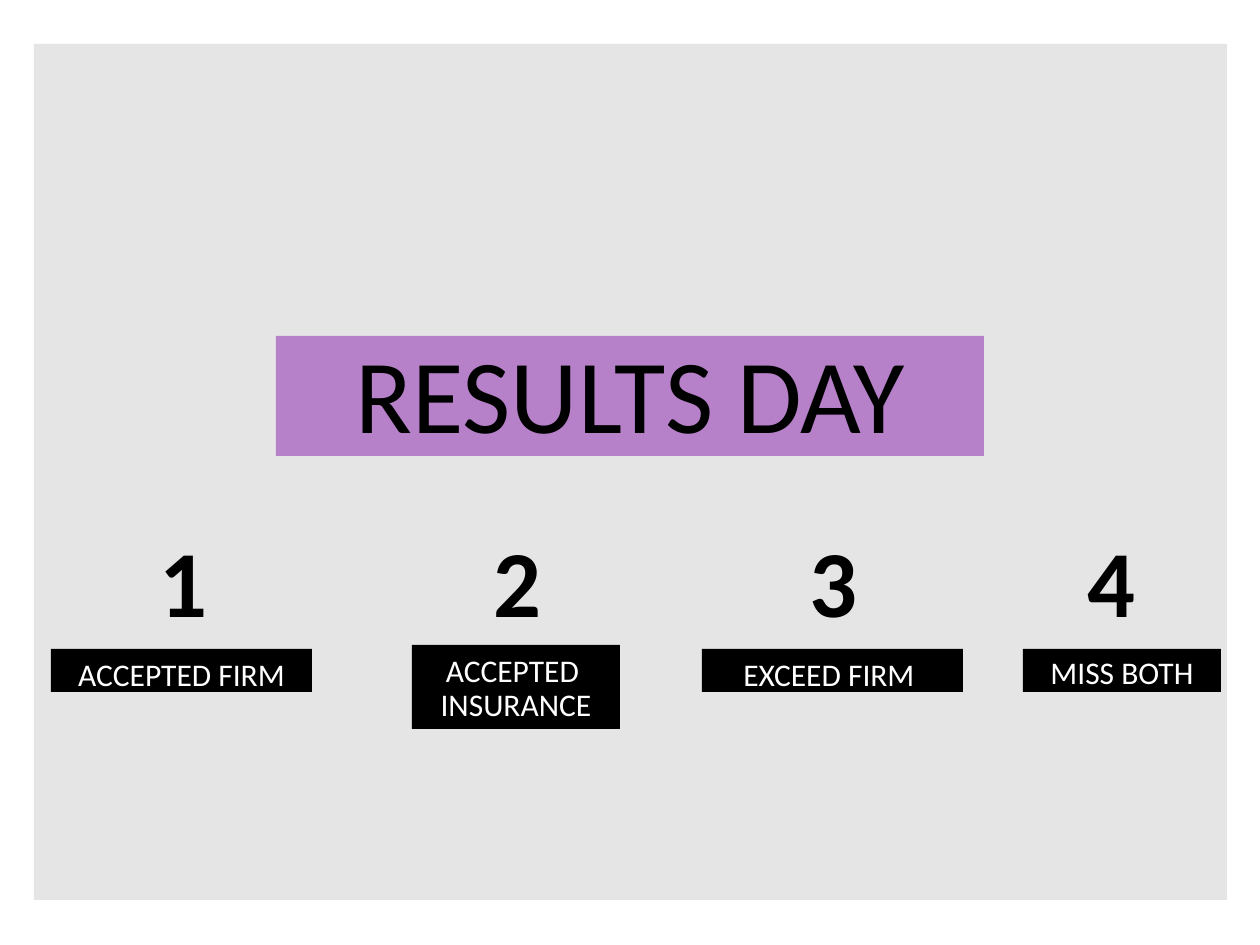
"""Build the results day slide with its four numbered outcomes."""
import dataclasses
from typing import Optional

import pptx
import pptx.dml.color
import pptx.enum.shapes
import pptx.enum.text
import pptx.util

EMU_PER_PX = 914400 / 126
COLOURS = {"panel": "E5E5E5", "title": "B781CA", "black": "000000", "white": "FFFFFF"}
TOP = pptx.enum.text.MSO_ANCHOR.TOP
BOTTOM = pptx.enum.text.MSO_ANCHOR.BOTTOM


@dataclasses.dataclass(frozen=True)
class Area:
    left: int
    top: int
    width: int
    height: int


@dataclasses.dataclass(frozen=True)
class TextStyle:
    size: int
    colour: str
    bold: bool = False
    anchor: pptx.enum.text.MSO_ANCHOR = TOP
    insets: tuple[int, int, int, int] = (0, 0, 0, 0)
    line_spacing: Optional[float] = 0.9
    space_after: float = 10.6


@dataclasses.dataclass(frozen=True)
class Outcome:
    number_left: int
    label: str
    area: Area
    label_inset: int = 10


TITLE = TextStyle(60, "black", anchor=BOTTOM)
NUMBER = TextStyle(54, "black", bold=True, insets=(9, 5, 9, 5), line_spacing=None, space_after=0)
LABEL = TextStyle(18, "white")

OUTCOMES = [
    Outcome(151, "ACCEPTED FIRM", Area(51, 649, 261, 43)),
    Outcome(485, "ACCEPTED \vINSURANCE", Area(412, 645, 208, 84)),
    Outcome(801, "EXCEED FIRM ", Area(702, 649, 261, 43)),
    Outcome(1079, "MISS BOTH", Area(1023, 649, 198, 43), label_inset=8),
]


def px(length: int) -> pptx.util.Emu:
    """Turn pixels into EMU."""
    return pptx.util.Emu(round(length * EMU_PER_PX))


def place(area: Area) -> list[pptx.util.Emu]:
    """Return the four lengths of an area in EMU."""
    return [px(length) for length in dataclasses.astuple(area)]


def colour(name: str) -> pptx.dml.color.RGBColor:
    """Look up a named colour."""
    return pptx.dml.color.RGBColor.from_string(COLOURS[name])


def apply(target: object, values: dict[str, object]) -> None:
    """Set each format value on the target."""
    for name, value in values.items():
        setattr(target, name, value)


def write(box, text: str, style: TextStyle) -> None:
    """Put one centred paragraph into a box."""
    sides = ("margin_left", "margin_top", "margin_right", "margin_bottom")
    frame = box.text_frame
    apply(frame, {"word_wrap": True, "vertical_anchor": style.anchor})
    apply(frame, dict(zip(sides, map(px, style.insets))))
    para = frame.paragraphs[0]
    para.text = text
    apply(para, {
        "alignment": pptx.enum.text.PP_ALIGN.CENTER,
        "line_spacing": style.line_spacing,
        "space_after": pptx.util.Pt(style.space_after),
    })
    for span in para.runs:
        apply(span.font, {"name": "Calibri", "size": pptx.util.Pt(style.size), "bold": style.bold})
        span.font.color.rgb = colour(style.colour)


def add_block(page, area: Area, fill: str):
    """Draw a plain filled rectangle."""
    block = page.shapes.add_shape(pptx.enum.shapes.MSO_SHAPE.RECTANGLE, *place(area))
    block.shadow.inherit = False
    block.fill.solid()
    block.fill.fore_color.rgb = colour(fill)
    block.line.fill.background()
    return block


def add_outcome(page, number: int, outcome: Outcome) -> None:
    """Draw an outcome label with its number above."""
    style = dataclasses.replace(LABEL, insets=(0, outcome.label_inset, 0, 0))
    write(add_block(page, outcome.area, "black"), outcome.label, style)
    box = page.shapes.add_textbox(*place(Area(outcome.number_left, 518, 60, 123)))
    write(box, str(number), NUMBER)


def main() -> None:
    """Build and save the deck."""
    deck = pptx.Presentation()
    apply(deck, {"slide_width": px(1260), "slide_height": px(945)})
    page = deck.slides.add_slide(deck.slide_layouts[6])
    add_block(page, Area(34, 44, 1193, 856), "panel")
    for number, outcome in enumerate(OUTCOMES, start=1):
        add_outcome(page, number, outcome)
    write(add_block(page, Area(276, 336, 708, 120), "title"), "RESULTS DAY", TITLE)
    deck.save("out.pptx")


if __name__ == "__main__":
    main()
